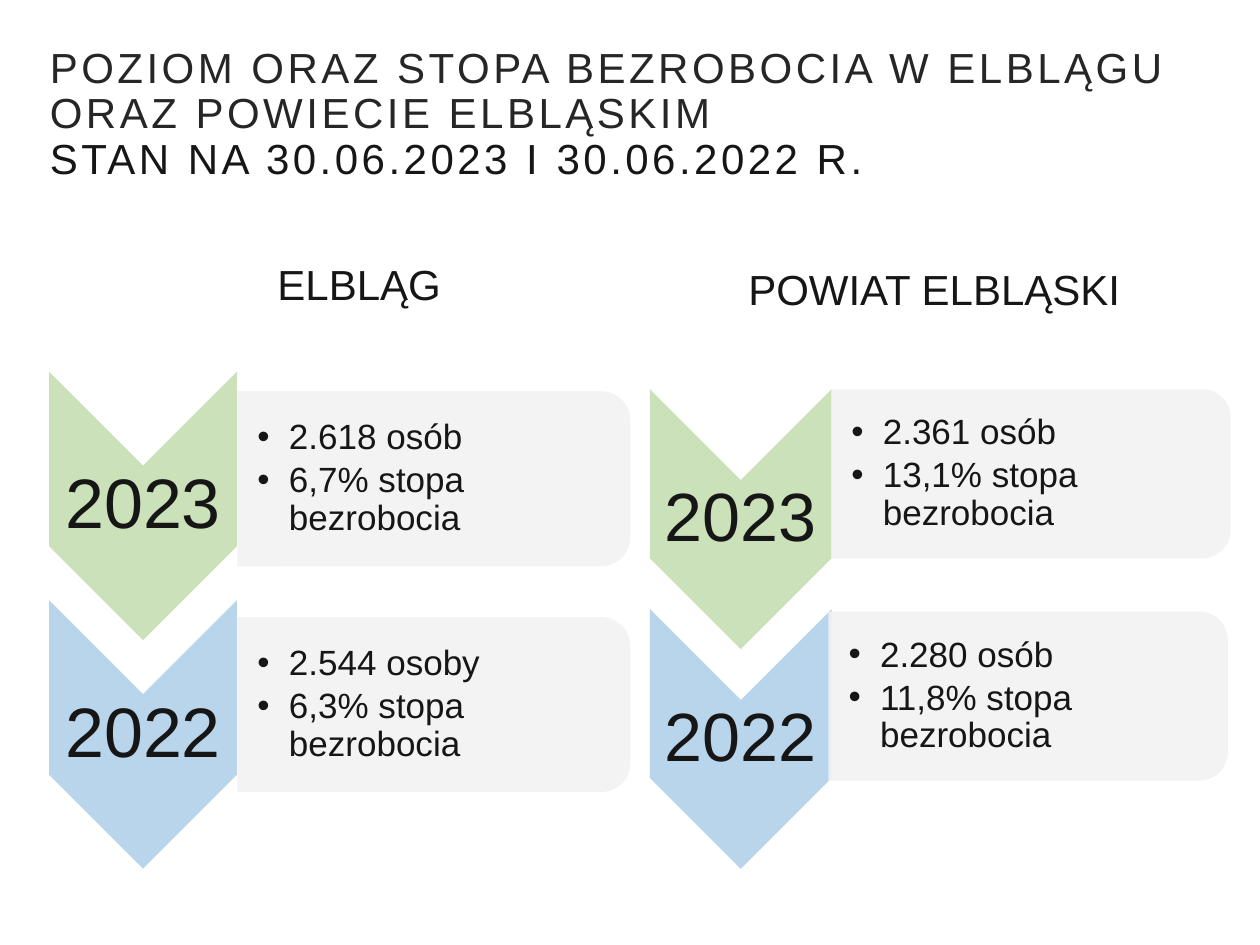
from pptx import Presentation
from pptx.dml.color import RGBColor
from pptx.enum.shapes import MSO_SHAPE
from pptx.enum.text import MSO_ANCHOR, PP_ALIGN
from pptx.oxml.ns import qn
from pptx.util import Pt
from lxml import etree

FONT = "Arial"
INK, TITLE_INK = "171616", "262626"
GREEN, BLUE, GREY = "CAE1B9", "B9D5EC", "F2F2F2"


def color(value):
    return RGBColor.from_string(value)


def add_text(slide, box, lines, size, colors=(INK,), align=PP_ALIGN.LEFT,
             insets=(7.2, 3.6, 7.2, 3.6), line_spacing=1.0, space_after=0,
             indent=0, bullet=False, tracking=0):
    """Write one paragraph per line; the last colour serves any further lines."""
    frame = slide.shapes.add_textbox(*map(Pt, box)).text_frame
    frame.word_wrap = True
    frame.vertical_anchor = MSO_ANCHOR.MIDDLE
    (frame.margin_left, frame.margin_top,
     frame.margin_right, frame.margin_bottom) = map(Pt, insets)
    for index, line in enumerate(lines):
        paragraph = frame.add_paragraph() if index else frame.paragraphs[0]
        paragraph.alignment = align
        paragraph.line_spacing = line_spacing
        paragraph.space_after = Pt(space_after)
        run = paragraph.add_run()
        run.text = line
        run.font.name = FONT
        run.font.size = Pt(size)
        run.font.color.rgb = color(colors[min(index, len(colors) - 1)])
        if tracking:
            run.font._element.set("spc", str(tracking * 100))
        properties = paragraph._p.get_or_add_pPr()
        if indent:
            properties.set("marL", str(Pt(indent)))
        if bullet:
            properties.set("indent", str(-Pt(indent)))
            etree.SubElement(properties, qn("a:buFont")).set("typeface", FONT)
            etree.SubElement(properties, qn("a:buChar")).set("char", "•")


def add_turned_shape(slide, kind, box, fill, opacity=100):
    """Add a shape turned by 90 degrees that covers the given box."""
    left, top, width, height = box
    shift = (width - height) / 2
    shape = slide.shapes.add_shape(
        kind, Pt(left + shift), Pt(top - shift), Pt(height), Pt(width))
    shape.rotation = 90
    shape.shadow.inherit = False
    shape.line.fill.background()
    shape.fill.solid()
    shape.fill.fore_color.rgb = color(fill)
    if opacity < 100:
        rgb = shape._element.spPr.find(qn("a:solidFill")).find(qn("a:srgbClr"))
        etree.SubElement(rgb, qn("a:alpha")).set("val", str(opacity * 1000))


def add_year(slide, box, year, size, fill):
    """Downward chevron with the year between its notch and its point."""
    left, top, width, height = box
    add_turned_shape(slide, MSO_SHAPE.CHEVRON, box, fill)
    add_text(slide, (left, top + width / 2, width, height - width), [year], size,
             align=PP_ALIGN.CENTER, insets=(2, 2, 2, 2), line_spacing=0.9)


def add_figures(slide, box, lines):
    """Panel rounded on the right with bulleted figures."""
    left, top, width, height = box
    add_turned_shape(slide, MSO_SHAPE.ROUND_2_SAME_RECTANGLE, box, GREY, opacity=90)
    add_text(slide, (left, top + 5, width - 5, height - 10), lines, 20,
             insets=(11.5, 0.7, 0.7, 0.7), line_spacing=0.9, space_after=3,
             indent=18, bullet=True)


def add_column(slide, origin, chevron_size, panel_size, year_size, rows):
    """Stack the years of one area; each row gives its offsets from the origin."""
    left, top = origin
    for year, fill, chevron_y, panel_x, panel_y, lines in rows:
        add_year(slide, (left, top + chevron_y, *chevron_size), year, year_size, fill)
        add_figures(slide, (left + panel_x, top + panel_y, *panel_size), lines)


def add_heading(slide, box, text, left_inset=7.2):
    add_text(slide, box, [text], 24, align=PP_ALIGN.CENTER,
             insets=(left_inset, 3.6, 7.2, 3.6))


def add_title(slide, box):
    add_text(slide, box,
             ["POZIOM ORAZ STOPA BEZROBOCIA W ELBLĄGU ORAZ POWIECIE ELBLĄSKIM",
              "STAN NA 30.06.2023 I 30.06.2022 R."],
             24, colors=(TITLE_INK, INK), line_spacing=0.9, indent=21.4, tracking=2)


def main():
    presentation = Presentation()
    presentation.slide_width, presentation.slide_height = Pt(720), Pt(540)
    slide = presentation.slides.add_slide(presentation.slide_layouts[6])

    # City
    add_column(slide, (28, 212.4), (107.4, 153.4), (224.6, 100), 40, [
        ("2023", GREEN, 0, 107.6, 11.2, ["2.618 osób", "6,7% stopa bezrobocia"]),
        ("2022", BLUE, 130.6, 107.6, 140.2, ["2.544 osoby", "6,3% stopa bezrobocia"]),
    ])
    # County
    add_column(slide, (371.4, 222.5), (103.8, 148.4), (228.2, 96.6), 39, [
        ("2023", GREEN, 0, 103.6, 0, ["2.361 osób", "13,1% stopa bezrobocia"]),
        ("2022", BLUE, 125.6, 102, 127, ["2.280 osób", "11,8% stopa bezrobocia"]),
    ])
    # Headings and title
    add_heading(slide, (62.6, 136.1, 258.5, 51.8), "ELBLĄG", left_inset=33.9)
    add_heading(slide, (398.9, 139, 270, 51.8), "POWIAT ELBLĄSKI")
    add_title(slide, (0, 20.2, 717, 91.4))

    presentation.save("out.pptx")


if __name__ == "__main__":
    main()
